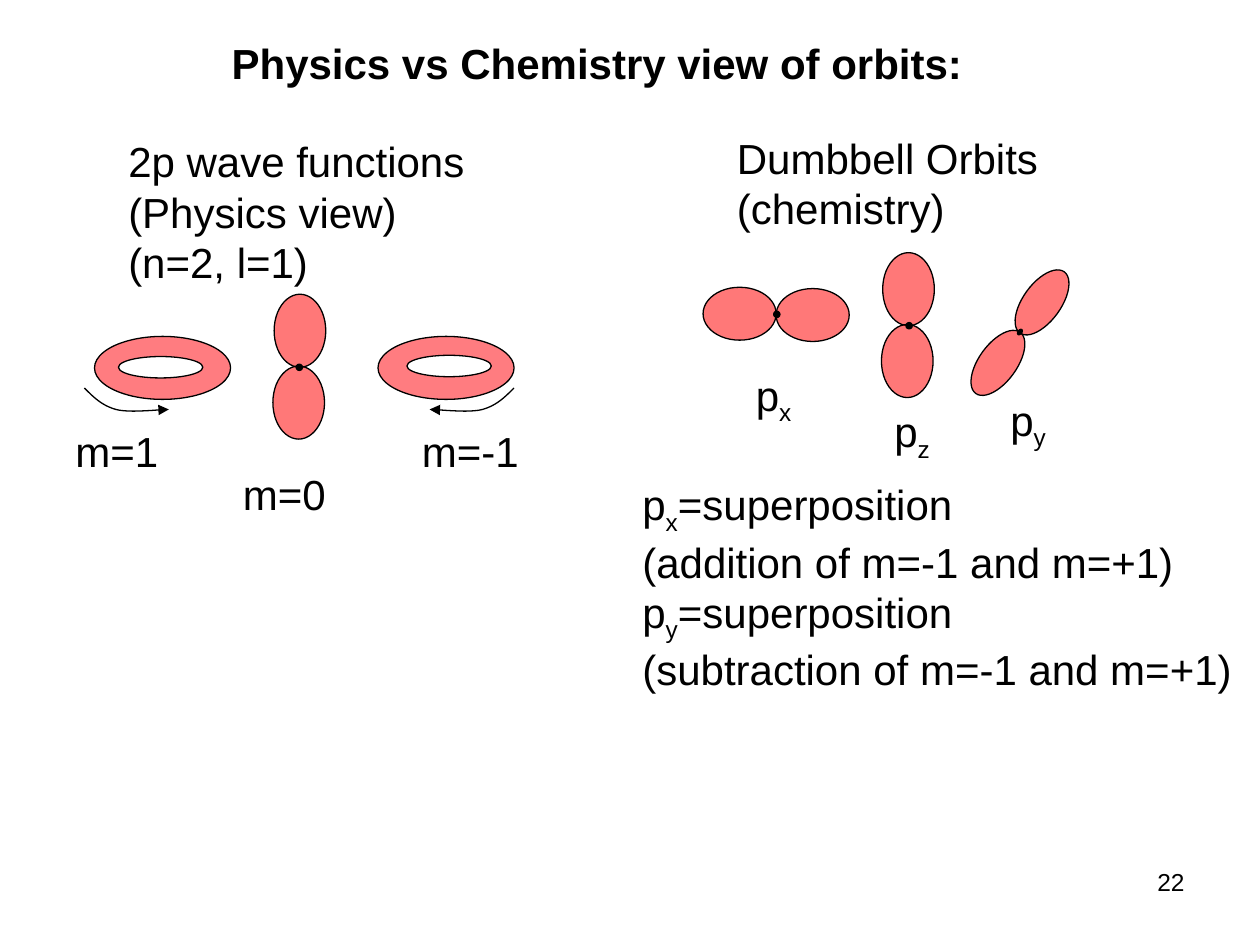
from pptx import Presentation
from pptx import util as u
from pptx.dml import color as dc
from pptx.enum import shapes, text
from pptx.oxml import ns
from lxml import etree

HUES = {"ink": "000000", "lobe": "FF0000", "ring": "FF7C80", "hole": "FFFFFF"}
OVAL = shapes.MSO_SHAPE.OVAL

deck = Presentation()
deck.slide_width, deck.slide_height = u.Inches(10), u.Inches(7.5)
slide = deck.slides.add_slide(deck.slide_layouts[6])


def write(box, lines, size=24, bold=False, wrap=False, align=None):
    """Text box; in a line, "_" separates normal and subscript runs."""
    frame = slide.shapes.add_textbox(*map(u.Inches, box)).text_frame
    frame.word_wrap = wrap
    for i, line in enumerate(lines):
        para = frame.paragraphs[0] if i == 0 else frame.add_paragraph()
        para.alignment = align
        for j, part in enumerate(line.split("_")):
            run = para.add_run()
            run.text = part
            run.font.name, run.font.size = "Arial", u.Pt(size)
            run.font.bold = bold
            run.font.color.rgb = dc.RGBColor.from_string(HUES["ink"])
            if j % 2:
                run.font._element.set("baseline", "-25000")


def oval(home, box, hue, turn=0, alpha=None):
    """Outlined ellipse on the slide or in a group."""
    item = home.shapes.add_shape(OVAL, *map(u.Inches, box))
    item.shadow.inherit = False
    item.rotation = turn
    item.fill.solid()
    item.fill.fore_color.rgb = dc.RGBColor.from_string(HUES[hue])
    item.line.color.rgb = dc.RGBColor.from_string(HUES["ink"])
    item.line.width = u.Pt(0.75)
    if alpha:
        tint = item._element.spPr.find(".//" + ns.qn("a:srgbClr"))
        etree.SubElement(tint, ns.qn("a:alpha"), val=str(alpha * 1000))


# Headings, notes and page number
write((7.17, 6.83, 2.33, 0.52), ["22"], size=14, wrap=True,
      align=text.PP_ALIGN.RIGHT)
write((5, 3.75, 5, 1.7),
      ["p_x_=superposition", "(addition of m=-1 and m=+1)",
       "p_y_=superposition", "(subtraction of m=-1 and m=+1)"], wrap=True)
write((1.74, 0.25, 6.09, 0.5), ["Physics vs Chemistry view of orbits:"],
      bold=True)
write((5.75, 1, 2.59, 0.9), ["Dumbbell Orbits", "(chemistry)"])
write((0.92, 1.03, 2.87, 1.3),
      ["2p wave functions", "(Physics view)", "(n=2, l=1)"])

# Dumbbells: turn, lobe size, dot size, corners of both lobes and the dot
bells = [
    (0, (0.58, 0.42), (0.05, 0.05), (5.58, 2.28), (6.16, 2.29), (6.14, 2.47)),
    (90, (0.58, 0.41), (0.05, 0.05), (6.92, 2.09), (6.91, 2.66), (7.19, 2.56)),
    (125.9, (0.6, 0.3), (0.05, 0.03), (7.97, 2.25), (7.62, 2.73), (8.07, 2.62)),
    (90, (0.58, 0.41), (0.05, 0.05), (2.09, 2.42), (2.08, 2.99), (2.35, 2.89)),
]
for turn, lobe, dot, one, two, mid in bells:
    group = slide.shapes.add_group_shape()
    for spot in (one, two):
        oval(group, spot + lobe, "lobe", turn, alpha=53)
    oval(group, mid + dot, "ink", turn)

# Rings
for left, hole in ((0.75, (0.94, 2.83)), (3, (3.23, 2.82))):
    oval(slide, (left, 2.67, 1.08, 0.5), "ring")
    oval(slide, hole + (0.67, 0.17), "hole")

# Curved arrows under the rings, mirrored: two Bezier arcs in short steps
arcs = [((0, 0), (0.07, 0.07), (0.14, 0.14), (0.25, 0.17)),
        ((0.25, 0.17), (0.36, 0.2), (0.59, 0.17), (0.67, 0.17))]
STEPS = 12
for start, way in ((0.67, 1), (4.08, -1)):
    dots = []
    for arc in arcs:
        for n in range(1, STEPS + 1):
            t = n / STEPS
            mix = ((1 - t) ** 3, 3 * t * (1 - t) ** 2, 3 * t * t * (1 - t), t ** 3)
            x, y = (sum(m * p[k] for m, p in zip(mix, arc)) for k in (0, 1))
            dots.append((u.Inches(start + way * x), u.Inches(3.08 + y)))
    pen = slide.shapes.build_freeform(u.Inches(start), u.Inches(3.08))
    pen.add_line_segments(dots, close=False)
    curve = pen.convert_to_shape()
    curve.shadow.inherit = False
    curve.fill.background()
    curve.line.color.rgb = dc.RGBColor.from_string(HUES["ink"])
    curve.line.width = u.Pt(0.75)
    etree.SubElement(curve.line._get_or_add_ln(), ns.qn("a:tailEnd"),
                     type="triangle")

# Orbit labels
labels = [("m=0", 1.83, 3.67, 0.86), ("m=1", 0.5, 3.33, 0.86),
          ("m=-1", 3.25, 3.33, 0.97), ("p_x", 5.9, 2.88, 0.5),
          ("p_z", 7, 3.17, 0.5), ("p_y", 7.92, 3.08, 0.5)]
for label, left, top, wide in labels:
    write((left, top, wide, 0.5), [label])

deck.save("out.pptx")
